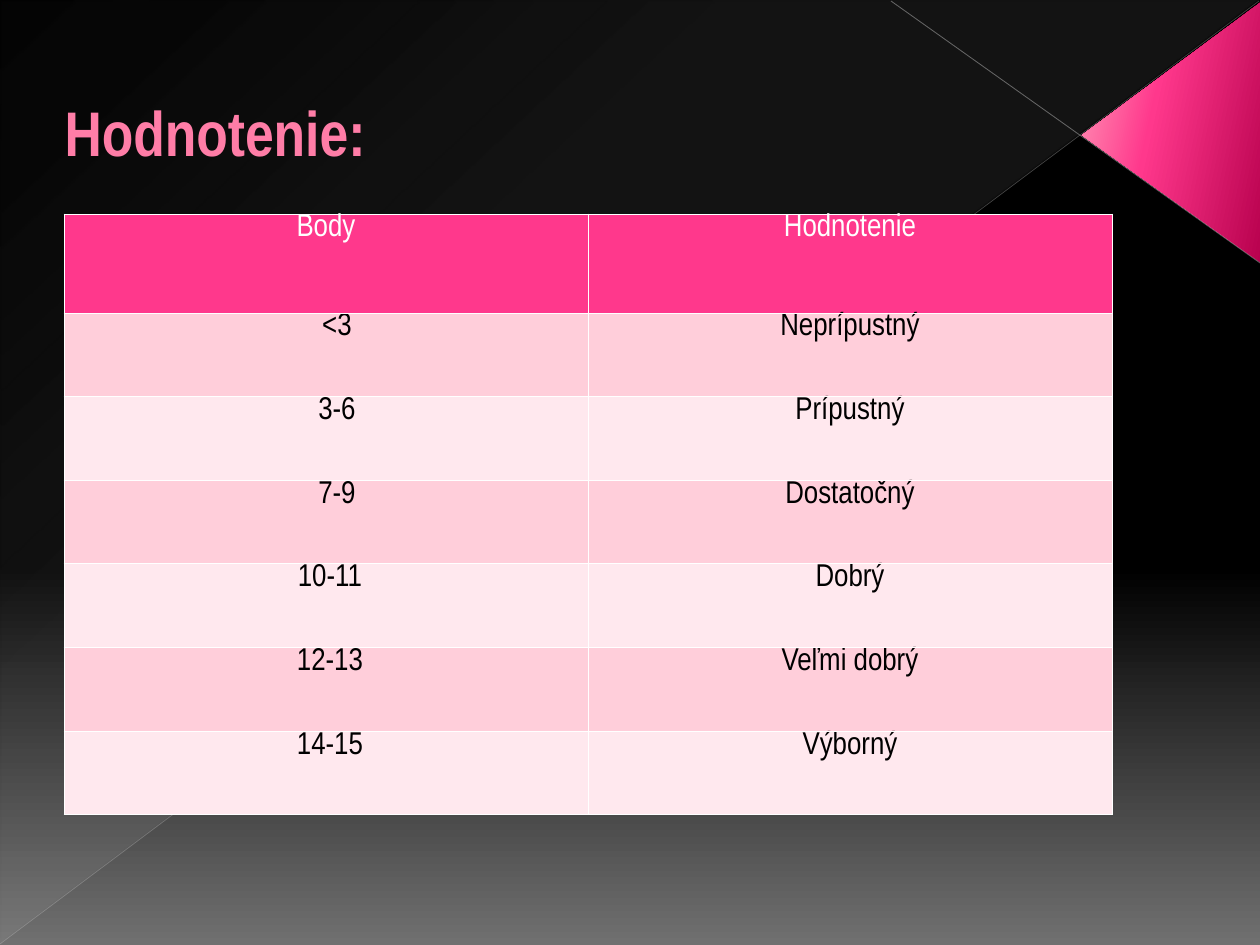
from dataclasses import dataclass
from lxml.etree import SubElement
from pptx import Presentation
from pptx.dml.color import RGBColor
from pptx.enum.shapes import MSO_CONNECTOR, MSO_SHAPE
from pptx.enum.text import MSO_ANCHOR, PP_ALIGN
from pptx.oxml.ns import qn
from pptx.util import Pt

PX = 914400 / 126


@dataclass
class Theme:
    font: str = "Arial Narrow"
    title_size: int = 36
    cell_size: int = 18
    title: str = "FF7DA7"
    title_outline: str = "B12761"
    white: str = "FFFFFF"
    black: str = "000000"
    header: str = "FF388C"
    bands: tuple = ("FFCEDA", "FFE8EE")
    backdrop: tuple = ((0, "000000", 100), (60, "000000", 100), (100, "707070", 100))
    sheen: tuple = ((0, "D2D2D2", 10), (70, "D2D2D2", 8), (100, "D2D2D2", 1))
    accent: tuple = ((0, "B8014E", 100), (60, "FF388C", 100), (100, "FF9CB9", 100))


def px(value):
    return round(value * PX)


def set_gradient(fill, owner, stops, angle):
    fill.gradient()
    fill.gradient_angle = 360 - angle
    stop_list = next(owner.iter(qn("a:gsLst")))
    for stop in list(stop_list):
        stop_list.remove(stop)
    for position, color, opacity in stops:
        stop = SubElement(stop_list, qn("a:gs"), pos=str(position * 1000))
        color_node = SubElement(stop, qn("a:srgbClr"), val=color)
        SubElement(color_node, qn("a:alpha"), val=str(opacity * 1000))


theme = Theme()
presentation = Presentation()
presentation.slide_width = px(1260)
presentation.slide_height = px(945)
slide = presentation.slides.add_slide(presentation.slide_layouts[5])
set_gradient(slide.background.fill, slide.element, theme.backdrop, 90)

sheen = slide.shapes.add_shape(MSO_SHAPE.RIGHT_TRIANGLE, px(1), px(1), px(1258), px(943))
accent = slide.shapes.add_shape(MSO_SHAPE.ISOSCELES_TRIANGLE, px(1041), px(43), px(261), px(179))
accent.adjustments[0] = 0.51
accent.rotation = 90
for shape, stops, angle in ((sheen, theme.sheen, 133), (accent, theme.accent, 258)):
    shape.shadow.inherit = False
    shape.line.fill.background()
    shape.element.spPr.xfrm.set("flipV", "1")
    set_gradient(shape.fill, shape.element, stops, angle)

for start_x, start_y, end_x, end_y, color, width, opacity in (
    (1260, 263, 891, 1, "C6C6C6", 0.47, 45),
    (0, 944, 1259, 1, "BFBFBF", 0.39, 35),
):
    connector = slide.shapes.add_connector(
        MSO_CONNECTOR.STRAIGHT, px(start_x), px(start_y), px(end_x), px(end_y)
    )
    connector.line.width = Pt(width)
    connector.line.color.rgb = RGBColor.from_string(color)
    properties = connector.element.spPr
    SubElement(next(properties.iter(qn("a:srgbClr"))), qn("a:alpha"), val=str(opacity * 1000))
    SubElement(properties, qn("a:effectLst"))

title = slide.shapes.title
slide.shapes.element.append(title.element)
title.left, title.top, title.width, title.height = px(52), px(37), px(998), px(188)
title.text_frame.text = "Hodnotenie:"
title.text_frame.vertical_anchor = MSO_ANCHOR.MIDDLE
paragraph = title.text_frame.paragraphs[0]
paragraph.alignment = PP_ALIGN.LEFT
run = paragraph.runs[0]
run.font.name = theme.font
run.font.size = Pt(theme.title_size)
run.font.bold = True
outline = SubElement(run.font._element, qn("a:ln"), w=str(Pt(0.5)))
run.font._element.insert(0, outline)
outline_fill = SubElement(outline, qn("a:solidFill"))
SubElement(outline_fill, qn("a:srgbClr"), val=theme.title_outline)
run.font.color.rgb = RGBColor.from_string(theme.title)

grades = (
    ("Body", "Hodnotenie", 0),
    ("<3", "Neprípustný", 22),
    ("3-6", "Prípustný", 22),
    ("7-9", "Dostatočný", 22),
    ("10-11", "Dobrý", 8),
    ("12-13", "Veľmi dobrý", 8),
    ("14-15", "Výborný", 8),
)
header_height, body_height = 99, 502
table = slide.shapes.add_table(
    len(grades), 2, px(64), px(214), px(1048), px(header_height + body_height)
).table
for row_index, (points, grade, indent) in enumerate(grades):
    is_header = row_index == 0
    row_height = header_height if is_header else body_height / (len(grades) - 1)
    table.rows[row_index].height = px(row_height)
    fill_color = theme.header if is_header else theme.bands[(row_index - 1) % 2]
    text_color = theme.white if is_header else theme.black
    for column_index, (text, shift) in enumerate(((points, indent), (grade, 0))):
        cell = table.cell(row_index, column_index)
        cell.margin_left, cell.margin_right = px(9 + shift), px(9)
        cell.margin_top = cell.margin_bottom = 0
        cell.vertical_anchor = MSO_ANCHOR.TOP
        cell.text_frame.text = text
        paragraph = cell.text_frame.paragraphs[0]
        paragraph.alignment = PP_ALIGN.CENTER
        paragraph.line_spacing = 1.0
        font = paragraph.runs[0].font
        font.name = theme.font
        font.size = Pt(theme.cell_size)
        font.bold = False
        font.color.rgb = RGBColor.from_string(text_color)
        cell_properties = cell._tc.get_or_add_tcPr()
        for side in ("a:lnL", "a:lnR", "a:lnT", "a:lnB"):
            border = SubElement(cell_properties, qn(side), w=str(Pt(0.5)))
            border_fill = SubElement(border, qn("a:solidFill"))
            SubElement(border_fill, qn("a:srgbClr"), val=theme.white)
        cell.fill.solid()
        cell.fill.fore_color.rgb = RGBColor.from_string(fill_color)

presentation.save("out.pptx")
